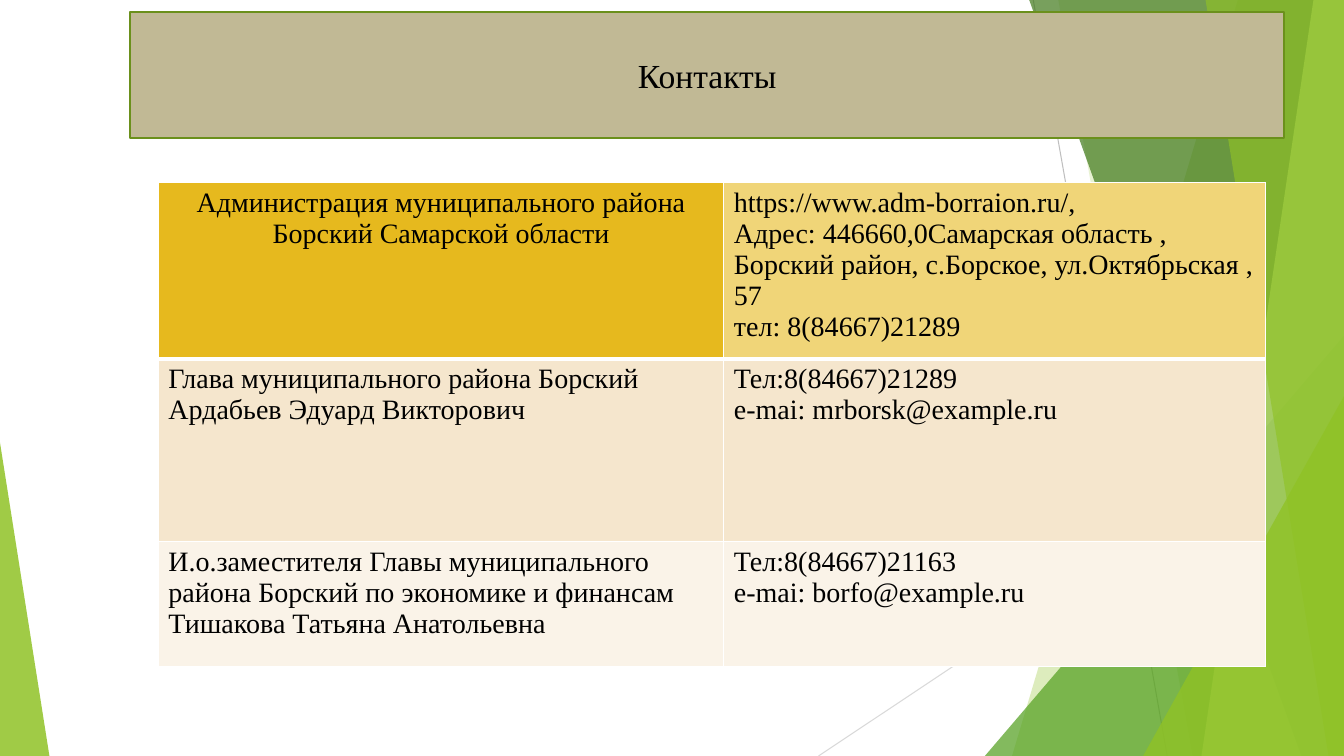
from lxml import etree
from pptx import Presentation
from pptx import util as u
from pptx.dml.color import RGBColor
from pptx.enum import shapes, text
from pptx.oxml.ns import qn

WIDE, HIGH = u.Inches(13.333), u.Inches(7.5)
FONT = "Times New Roman"
LINES = [((76.88, 0), (86.85, 100), "BFBFBF"), ((100, 53.73), (60.9, 100), "D9D9D9")]
BACK = [(92.1, 75.3, "90C226", 30), (78.75, 88.73, "90C226", 20)]
FRONT = [(76.58, 96.83, "3F7819", 70), (97.73, 89.4, "C0E474", 70),
         (89.7, 98.85, "90C226", 65)]
COLS = [42.08, 40.28]
ROWS = [
    (23.33, ["E6B91E", "F0D578"], [
        "Администрация муниципального района Борский Самарской области",
        "https://www.adm-borraion.ru/,\n"
        "Адрес: 446660,0Самарская область , Борский район, с.Борское, ул.Октябрьская , 57\n"
        "тел: 8(84667)21289"]),
    (24.13, ["F5E6CD"] * 2, [
        "Глава муниципального района Борский\nАрдабьев Эдуард Викторович",
        "Тел:8(84667)21289\ne-mai: mrborsk@example.ru"]),
    (16.53, ["FAF3E8"] * 2, [
        "И.о.заместителя Главы муниципального района Борский по экономике и финансам\n"
        "Тишакова Татьяна Анатольевна",
        "Тел:8(84667)21163\ne-mai: borfo@example.ru"]),
]


def across(share):
    return u.Emu(round(WIDE * share / 100))


def down(share):
    return u.Emu(round(HIGH * share / 100))


def box(left, top, width, height):
    return across(left), down(top), across(width), down(height)


def paint(part, tone, alpha=100):
    part.solid()
    part.fore_color.rgb = RGBColor.from_string(tone)
    if alpha < 100:
        mark = next(part.fore_color._xFill.iter(qn("a:srgbClr")))
        etree.SubElement(mark, qn("a:alpha"), val=str(alpha * 1000))


def write(frame, words, size=20, tone="000000", align=text.PP_ALIGN.LEFT):
    frame.text = words
    for para in frame.paragraphs:
        para.alignment = align
        for run in para.runs:
            run.font.name, run.font.size = FONT, u.Pt(size)
            paint(run.font.fill, tone)


def finish(shape, tone, alpha):
    shape.shadow.inherit = False
    paint(shape.fill, tone, alpha)
    shape.line.fill.background()


def add_line(slide, start, end, tone):
    line = slide.shapes.add_connector(
        shapes.MSO_CONNECTOR.STRAIGHT, across(start[0]), down(start[1]),
        across(end[0]), down(end[1]))
    paint(line.line.fill, tone)
    line.line.width = u.Pt(0.75)
    etree.SubElement(line._element.spPr, qn("a:effectLst"))


def add_band(slide, head, foot, tone, alpha):
    form = slide.shapes.build_freeform(across(head), 0, scale=1.0)
    form.add_line_segments([(WIDE, 0), (WIDE, HIGH), (across(foot), HIGH)], close=True)
    finish(form.convert_to_shape(), tone, alpha)


def add_wedge(slide, left, top, width, peak, tone, alpha):
    wedge = slide.shapes.add_shape(
        shapes.MSO_SHAPE.ISOSCELES_TRIANGLE, *box(left, top, width, 100 - top))
    wedge.adjustments[0] = peak
    finish(wedge, tone, alpha)


def add_title(slide, words):
    title = slide.shapes.title
    title.left, title.top, title.width, title.height = box(9.68, 1.6, 85.88, 16.67)
    form = etree.Element(qn("a:prstGeom"), prst="roundRect")
    etree.SubElement(form, qn("a:avLst"))
    title._element.spPr.find(qn("a:xfrm")).addnext(form)
    paint(title.fill, "C1B995")
    paint(title.line.fill, "6B901C")
    title.line.width = u.Pt(1.5)
    title.text_frame.vertical_anchor = text.MSO_ANCHOR.MIDDLE
    write(title.text_frame, words, size=24, align=text.PP_ALIGN.CENTER)
    slide.shapes._spTree.append(title._element)


def edge(cell, widths):
    props = cell._tc.get_or_add_tcPr()
    for side, width in zip("LRTB", widths):
        line = etree.SubElement(props, qn("a:ln" + side), w=str(u.Pt(width)))
        fill = etree.SubElement(line, qn("a:solidFill"))
        etree.SubElement(fill, qn("a:srgbClr"), val="FFFFFF")


def add_grid(slide):
    size = box(11.78, 24.13, sum(COLS), sum(row[0] for row in ROWS))
    grid = slide.shapes.add_table(len(ROWS), len(COLS), *size).table
    for col, width in zip(grid.columns, COLS):
        col.width = across(width)
    for r, (height, tones, words) in enumerate(ROWS):
        grid.rows[r].height = down(height)
        for c, (tone, phrase) in enumerate(zip(tones, words)):
            cell = grid.cell(r, c)
            edge(cell, (1, 1, 3 if r == 1 else 1, 3 if r == 0 else 1))
            paint(cell.fill, tone)
            lead = r == c == 0
            write(cell.text_frame, phrase,
                  align=text.PP_ALIGN.CENTER if lead else text.PP_ALIGN.LEFT)


def main():
    deck = Presentation()
    deck.slide_width, deck.slide_height = WIDE, HIGH
    slide = deck.slides.add_slide(deck.slide_layouts.get_by_name("Title Only"))
    for line in LINES:
        add_line(slide, *line)
    for band in BACK:
        add_band(slide, *band)
    add_wedge(slide, 73.28, 44.4, 26.72, 1, "54A021", 72)
    for band in FRONT:
        add_band(slide, *band)
    add_wedge(slide, 85.05, 52.4, 14.95, 1, "90C226", 80)
    add_wedge(slide, 0, 58.53, 3.68, 0, "90C226", 85)
    add_title(slide, "Контакты")
    add_grid(slide)
    deck.save("out.pptx")


if __name__ == "__main__":
    main()
